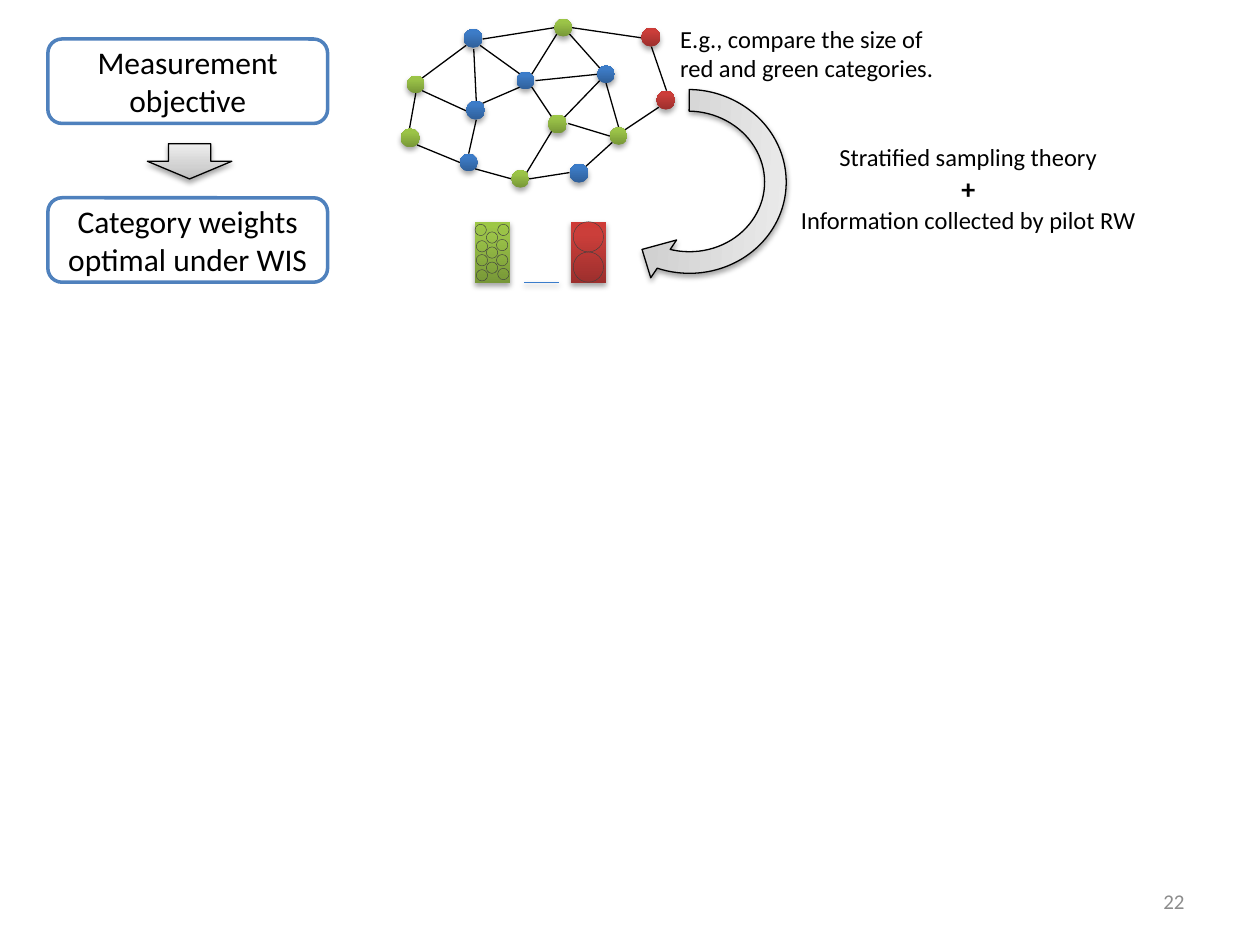
from copy import deepcopy
from dataclasses import dataclass
from typing import Optional

from lxml import etree
from pptx import Presentation
from pptx.dml.color import RGBColor
from pptx.enum import shapes, text
from pptx.oxml import ns
from pptx.util import Inches, Pt

BLACK = RGBColor(0x00, 0x00, 0x00)
WHITE = RGBColor(0xFF, 0xFF, 0xFF)
FRAME = RGBColor(0x4F, 0x81, 0xBD)
OUTLINE = RGBColor(0x40, 0x40, 0x40)
MUTED = RGBColor(0x8C, 0x8C, 0x8C)
FONT = "Calibri"
KIND = shapes.MSO_SHAPE
ALIGN = text.PP_ALIGN


@dataclass(frozen=True)
class Gradient:
    colors: tuple[RGBColor, RGBColor, RGBColor]
    middle: float


@dataclass(frozen=True)
class Box:
    left: float
    top: float
    width: float
    height: float


@dataclass(frozen=True)
class Node:
    left: float
    top: float
    size: float
    gradient: Gradient


@dataclass(frozen=True)
class Edge:
    x1: float
    y1: float
    x2: float
    y2: float


@dataclass(frozen=True)
class Line:
    content: str
    size: int = 14
    bold: bool = False


def gradient(middle: float, *colors: str) -> Gradient:
    return Gradient(tuple(RGBColor.from_string(c) for c in colors), middle)


BLUE = gradient(0.8, "2F5F99", "3D7CC7", "3A7CCB")
GREEN = gradient(0.8, "779737", "9BC348", "9DC746")
RED = gradient(0.8, "9C2F2D", "CB3E3A", "CE3B37")
GRAY = gradient(0.35, "BDBDBD", "D1D1D1", "EEEEEE")

NODES = [
    Node(4.74, 0.52, 0.14, BLUE), Node(3.65, 1.22, 0.14, BLUE),
    Node(4.06, 1.35, 0.14, GREEN), Node(3.23, 0.6, 0.14, GREEN),
    Node(4.84, 1.01, 0.14, GREEN), Node(3.7, 0.8, 0.15, BLUE),
    Node(5.21, 0.72, 0.15, RED), Node(4.52, 1.3, 0.15, BLUE),
    Node(5.09, 0.22, 0.15, RED), Node(4.35, 0.91, 0.15, GREEN),
    Node(4.1, 0.57, 0.14, BLUE), Node(3.18, 1.02, 0.15, GREEN),
    Node(4.4, 0.15, 0.14, GREEN), Node(3.68, 0.23, 0.15, BLUE),
]
EDGES = [
    Edge(4.91, 1.01, 4.81, 0.66), Edge(4.22, 0.59, 4.42, 0.27),
    Edge(5.17, 0.37, 5.29, 0.72), Edge(4.54, 0.22, 5.09, 0.3),
    Edge(4.76, 0.64, 4.48, 0.93), Edge(5.23, 0.85, 4.96, 1.03),
    Edge(4.86, 1.13, 4.65, 1.32), Edge(4.38, 1.04, 4.18, 1.37),
    Edge(4.22, 0.69, 4.38, 0.93), Edge(3.83, 0.82, 4.13, 0.69),
    Edge(3.78, 0.95, 3.72, 1.22), Edge(3.35, 0.72, 3.7, 0.88),
    Edge(3.3, 0.74, 3.25, 1.02), Edge(3.31, 1.15, 3.65, 1.29),
    Edge(3.77, 1.34, 4.06, 1.42), Edge(4.2, 1.42, 4.52, 1.37),
    Edge(4.51, 0.98, 4.84, 1.08), Edge(3.83, 0.31, 4.4, 0.22),
    Edge(3.81, 0.36, 4.13, 0.59), Edge(3.35, 0.62, 3.7, 0.36),
    Edge(3.76, 0.39, 3.78, 0.8), Edge(4.52, 0.27, 4.76, 0.54),
    Edge(4.25, 0.64, 4.74, 0.59),
]
SMALL_RINGS = [
    (3.94, 2.02), (3.78, 2.14), (3.95, 2.13), (3.86, 2.08), (3.78, 2.02), (3.86, 1.96),
    (3.94, 1.9), (3.78, 1.91), (3.86, 1.84), (3.77, 1.78), (3.95, 1.78),
]
LARGE_RINGS = [(4.55, 1.76), (4.55, 2.0)]
BARS = [
    (Box(3.77, 1.76, 0.28, 0.49), GREEN),
    (Box(4.53, 1.76, 0.28, 0.49), RED),
    (Box(4.16, 2.24, 0.28, 0.01), BLUE),
]


def add_shape(parent, kind: KIND, box: Box, line: Optional[RGBColor] = None, weight: float = 0.75):
    sp = parent.add_shape(kind, Inches(box.left), Inches(box.top),
                          Inches(box.width), Inches(box.height))
    sp.shadow.inherit = False
    if line is None:
        sp.line.fill.background()
    else:
        sp.line.color.rgb = line
        sp.line.width = Pt(weight)
    return sp


def add_shaded(parent, kind: KIND, box: Box, shade: Gradient, line: Optional[RGBColor] = None):
    sp = add_shape(parent, kind, box, line)
    sp.fill.gradient()
    sp.fill.gradient_angle = 90
    stop_list = sp._element.spPr.find(".//" + ns.qn("a:gsLst"))
    stop_list.append(deepcopy(stop_list[0]))
    for stop, color, position in zip(sp.fill.gradient_stops, shade.colors, (0, shade.middle, 1)):
        stop.color.rgb = color
        stop.position = position
    effects = sp._element.spPr.find(ns.qn("a:effectLst"))
    shadow = etree.SubElement(effects, ns.qn("a:outerShdw"), blurRad=str(Pt(3.1)),
                              dist=str(Pt(1.8)), dir="5400000", rotWithShape="0")
    color = etree.SubElement(shadow, ns.qn("a:srgbClr"), val="000000")
    etree.SubElement(color, ns.qn("a:alpha"), val="35000")
    return sp


def add_edge(parent, edge: Edge) -> None:
    line = parent.add_connector(shapes.MSO_CONNECTOR.STRAIGHT, Inches(edge.x1), Inches(edge.y1),
                                Inches(edge.x2), Inches(edge.y2))
    line.line.color.rgb = BLACK
    line.line.width = Pt(0.75)
    etree.SubElement(line._element.spPr, ns.qn("a:effectLst"))


def add_rings(parent, places: list[tuple[float, float]], size: float) -> None:
    for left, top in places:
        add_shape(parent, KIND.OVAL, Box(left, top, size, size), OUTLINE, 0.25).fill.background()


def write(sp, lines: list[Line], align: ALIGN, color: RGBColor = BLACK,
          anchor: text.MSO_ANCHOR = text.MSO_ANCHOR.TOP) -> None:
    tf = sp.text_frame
    tf.word_wrap = True
    tf.vertical_anchor = anchor
    for i, line in enumerate(lines):
        p = tf.add_paragraph() if i else tf.paragraphs[0]
        p.text = line.content
        p.alignment = align
        p.font.name = FONT
        p.font.size = Pt(line.size)
        p.font.bold = line.bold
        p.font.color.rgb = color


def add_text(parent, box: Box, lines: list[Line], align: ALIGN, color: RGBColor = BLACK,
             anchor: text.MSO_ANCHOR = text.MSO_ANCHOR.TOP) -> None:
    sp = parent.add_textbox(Inches(box.left), Inches(box.top),
                            Inches(box.width), Inches(box.height))
    write(sp, lines, align, color, anchor)


def main() -> None:
    prs = Presentation()
    prs.slide_width, prs.slide_height = Inches(10), Inches(7.5)
    s = prs.slides.add_slide(prs.slide_layouts[6]).shapes

    for top, label in ((0.31, "Measurement objective"), (1.57, "Category weights optimal under WIS")):
        sp = add_shape(s, KIND.ROUNDED_RECTANGLE, Box(0.38, top, 2.22, 0.67), FRAME, 2)
        sp.fill.solid()
        sp.fill.fore_color.rgb = WHITE
        write(sp, [Line(label, 18)], ALIGN.CENTER, anchor=text.MSO_ANCHOR.MIDDLE)

    theory = [Line("Stratified sampling theory"), Line("+", 16, True),
              Line("Information collected by pilot RW")]
    add_text(s, Box(6.03, 1.08, 3.31, 0.84), theory, ALIGN.CENTER)

    network = s.add_group_shape().shapes
    for edge in EDGES:
        add_edge(network, edge)
    for node in NODES:
        add_shaded(network, KIND.OVAL, Box(node.left, node.top, node.size, node.size), node.gradient)

    add_shaded(s, KIND.DOWN_ARROW, Box(1.17, 1.14, 0.67, 0.28), GRAY, BLACK)
    bars = s.add_group_shape().shapes
    for box, shade in BARS:
        add_shaded(bars, KIND.RECTANGLE, box, shade)

    arc = add_shaded(s, KIND.CIRCULAR_ARROW, Box(4.64, 0.57, 1.65, 1.74), GRAY, BLACK)
    arc.rotation = 93.7
    for i, value in enumerate((0.104, 9.933, 8.511, 106.009, 0.11)):
        arc.adjustments[i] = value

    add_text(s, Box(5.3, 0.14, 2.26, 0.57),
             [Line("E.g., compare the size of red and green categories.")], ALIGN.LEFT)
    add_text(s, Box(7.17, 6.95, 2.33, 0.4), [Line("22", 12)], ALIGN.RIGHT, MUTED,
             text.MSO_ANCHOR.MIDDLE)
    add_rings(s.add_group_shape().shapes, SMALL_RINGS, 0.09)
    add_rings(s.add_group_shape().shapes, LARGE_RINGS, 0.24)
    prs.save("out.pptx")


if __name__ == "__main__":
    main()
